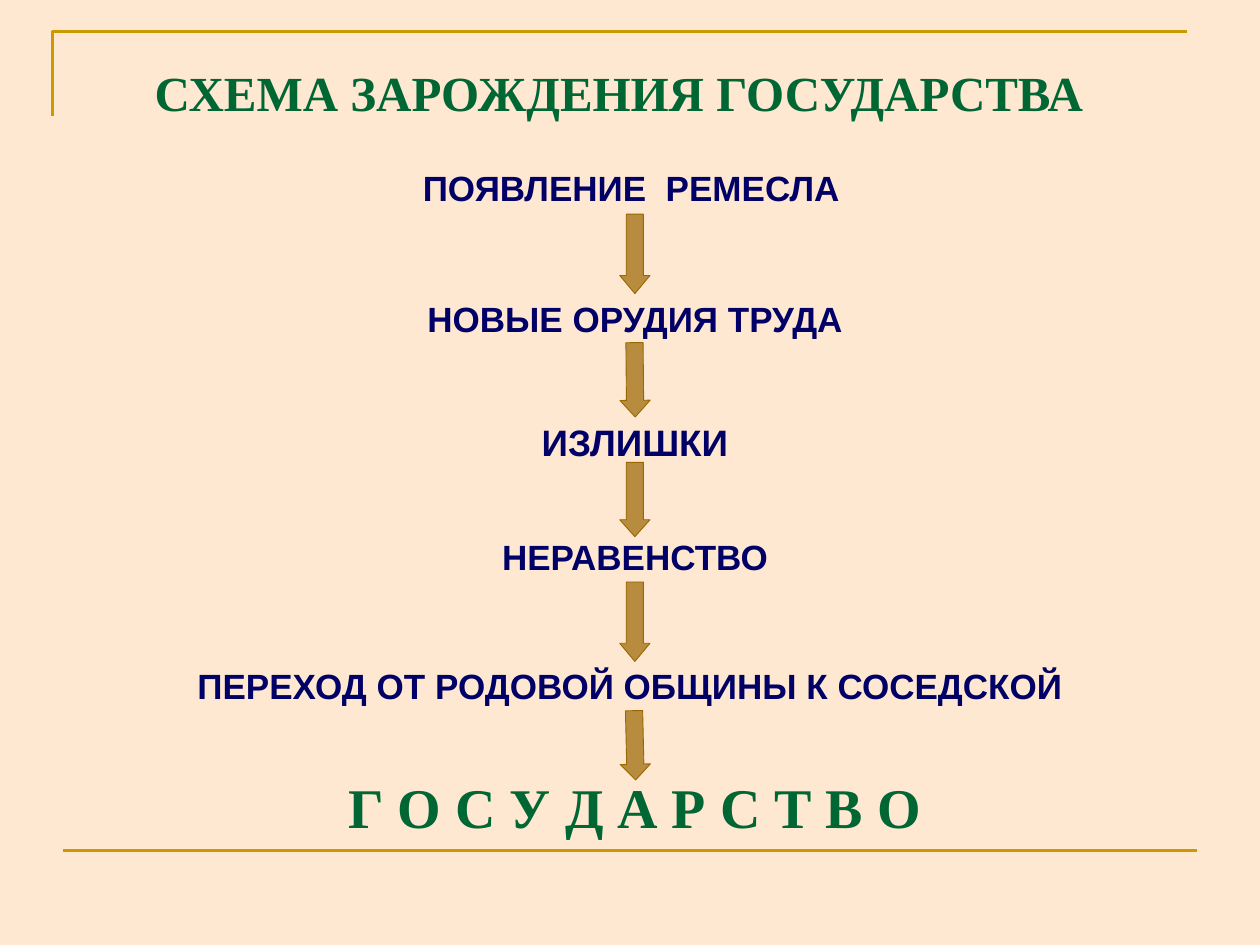
from pptx import Presentation, util as u
from pptx.dml.color import RGBColor
from pptx.enum import shapes as s, text as t
from pptx.oxml.ns import qn
from lxml import etree

PAGE = (720, 540)
SAND, GOLD, BROWN, GREEN, NAVY = "FFE8D1", "CC9900", "996600", "006633", "000066"
SERIF = dict(name="Times New Roman", bold=True, color=GREEN)
SANS = dict(name="Arial", bold=True, color=NAVY, size=20)

TITLE = ("СХЕМА ЗАРОЖДЕНИЯ ГОСУДАРСТВА", (42.5, 20.2, 642.2, 51.1), {**SERIF, "size": 28})
STEPS = [
    ("ПОЯВЛЕНИЕ  РЕМЕСЛА", (195.8, 91.4, 329.8, 31), SANS),
    ("НОВЫЕ ОРУДИЯ ТРУДА", (42.5, 167.8, 640.8, 28), SANS),
    ("ИЗЛИШКИ", (48.2, 236.2, 629.3, 28), {**SANS, "size": 21}),
    ("НЕРАВЕНСТВО", (42.5, 303.8, 640.8, 28), SANS),
    ("ПЕРЕХОД ОТ РОДОВОЙ ОБЩИНЫ К СОСЕДСКОЙ", (42.5, 378, 635, 28), SANS),
    ("Г О С У Д А Р С Т В О", (36.7, 445.7, 652.3, 30.2), {**SERIF, "size": 32}),
]
ARROWS = [
    (122.4, 45.4, 0, 0.6),
    (195.8, 42.5, -0.5, 0.55),
    (264.2, 42.5, 0, 0.56),
    (332.6, 45.4, 0, 0.6),
    (406.1, 39.6, -1.3, 0.52),
]
MID, WIDE = 362.8, 17.3
FRAME = [(30.2, 66.2), (30.2, 18), (678.2, 18)]
BASE = (36, 486, 684, 486)


def pts(vals):
    return [u.Pt(v) for v in vals]


def tint(fmt, code):
    fmt.rgb = RGBColor.from_string(code)


def paint(fill, code):
    fill.solid()
    tint(fill.fore_color, code)


def draw(line, code, width):
    paint(line.fill, code)
    line.width = u.Pt(width)


def place(shape, box):
    for key, val in zip(("left", "top", "width", "height"), pts(box)):
        setattr(shape, key, val)


def write(shape, words, look, anchor=t.MSO_ANCHOR.MIDDLE, gap=0.2):
    frame = shape.text_frame
    frame.word_wrap = True
    frame.auto_size = t.MSO_AUTO_SIZE.NONE
    frame.vertical_anchor = anchor
    para = frame.paragraphs[0]
    para.alignment = t.PP_ALIGN.CENTER
    para.space_before = u.Pt(look["size"] * gap)
    run = para.add_run()
    run.text = words
    for key, val in look.items():
        if key == "color":
            tint(run.font.color, val)
        else:
            setattr(run.font, key, u.Pt(val) if key == "size" else val)
    return frame


def add_frame(slide):
    pen = slide.shapes.build_freeform(*pts(FRAME[0]))
    pen.add_line_segments([pts(spot) for spot in FRAME[1:]], close=False)
    edge = pen.convert_to_shape()
    edge.shadow.inherit = False
    edge.fill.background()
    draw(edge.line, GOLD, 1.5)
    base = slide.shapes.add_connector(s.MSO_CONNECTOR.STRAIGHT, *pts(BASE))
    draw(base.line, GOLD, 1.5)
    etree.SubElement(base._element.spPr, qn("a:effectLst"))


def add_title(slide):
    words, box, look = TITLE
    title = slide.shapes.title
    place(title, box)
    frame = write(title, words, look, gap=0)
    frame.margin_top, frame.margin_right, frame.margin_bottom = pts((14, 27.2, 0))


def add_arrow(slide, top, height, turn, head):
    box = pts((MID - WIDE / 2, top, WIDE, height))
    arrow = slide.shapes.add_shape(s.MSO_SHAPE.DOWN_ARROW, *box)
    arrow.shadow.inherit = False
    arrow.rotation = turn
    arrow.adjustments[0], arrow.adjustments[1] = 0.57, head
    paint(arrow.fill, BROWN)
    draw(arrow.line, BROWN, 0.5)
    color = arrow._element.spPr.find(qn("a:solidFill"))[0]
    etree.SubElement(color, qn("a:alpha"), val="70000")


def main():
    deck = Presentation()
    deck.slide_width, deck.slide_height = pts(PAGE)
    slide = deck.slides.add_slide(deck.slide_layouts[5])
    paint(slide.background.fill, SAND)
    add_frame(slide)
    add_title(slide)
    for words, box, look in STEPS:
        top = look["size"] == 21
        anchor = t.MSO_ANCHOR.TOP if top else t.MSO_ANCHOR.MIDDLE
        write(slide.shapes.add_textbox(*pts(box)), words, look, anchor)
    for arrow in ARROWS:
        add_arrow(slide, *arrow)
    deck.save("out.pptx")


if __name__ == "__main__":
    main()
